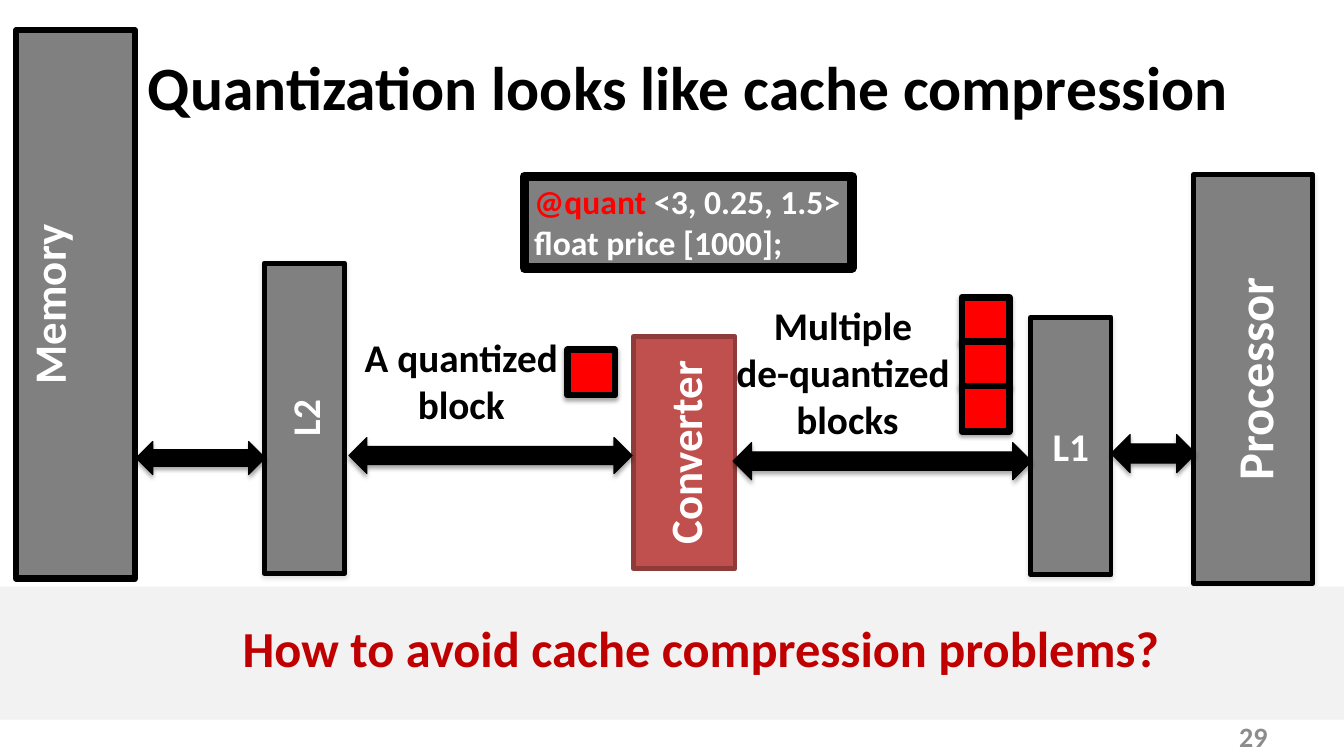
from pptx import Presentation
from pptx.dml.color import RGBColor
from pptx.enum.shapes import MSO_SHAPE as Preset
from pptx.enum.text import MSO_ANCHOR as Anchor, PP_ALIGN as Align
from pptx.oxml import parse_xml
from pptx.oxml.ns import nsdecls, qn
from pptx.util import Inches, Pt

BLACK = RGBColor(0x00, 0x00, 0x00)
WHITE = RGBColor(0xFF, 0xFF, 0xFF)
GRAY = RGBColor(0x80, 0x80, 0x80)
PALE_GRAY = RGBColor(0xF2, 0xF2, 0xF2)
NUMBER_GRAY = RGBColor(0x8C, 0x8C, 0x8C)
SHADOW_GRAY = RGBColor(0xA6, 0xA6, 0xA6)
RED = RGBColor(0xFF, 0x00, 0x00)
DARK_RED = RGBColor(0xC0, 0x00, 0x00)
BRICK = RGBColor(0xC0, 0x50, 0x4D)
BRICK_EDGE = RGBColor(0x8E, 0x3B, 0x39)


def style_font(font, size, color):
    font.name = "Calibri"
    font.size = Pt(size)
    font.bold = True
    font.color.rgb = color


def write(frame, lines, size, color, align=Align.CENTER, anchor=Anchor.MIDDLE):
    frame.word_wrap = True
    frame.vertical_anchor = anchor
    for index, line in enumerate(lines):
        paragraph = frame.paragraphs[0] if index == 0 else frame.add_paragraph()
        paragraph.text = line
        paragraph.alignment = align
        style_font(paragraph.font, size, color)


def add_shadow(shape, color):
    effects = shape._element.spPr.find(qn("a:effectLst"))
    effects.append(parse_xml(
        f'<a:outerShdw {nsdecls("a")} blurRad="{Pt(3.1)}" dist="{Pt(1.8)}" '
        f'dir="5400000" rotWithShape="0"><a:srgbClr val="{color}">'
        '<a:alpha val="35000"/></a:srgbClr></a:outerShdw>'))


def add_block(slide, box, fill, edge=None, width=0, shadow=None,
              preset=Preset.RECTANGLE):
    block = slide.shapes.add_shape(preset, *map(Inches, box))
    block.fill.solid()
    block.fill.fore_color.rgb = fill
    if edge is None:
        block.line.fill.background()
    else:
        block.line.color.rgb = edge
        block.line.width = Pt(width)
    block.shadow.inherit = False
    if shadow is not None:
        add_shadow(block, shadow)
    return block


def add_unit(slide, name, box, size, fill=GRAY, edge=BLACK, shadow=SHADOW_GRAY,
             upward=True, space=0.2):
    frame = add_block(slide, box, fill, edge, 3.5, shadow).text_frame
    write(frame, [name], size, WHITE)
    frame.paragraphs[0].space_before = Pt(size * space)
    if upward:
        frame._txBody.bodyPr.set("vert", "vert270")


def add_arrow(slide, box):
    add_block(slide, box, BLACK, BLACK, 0.75, BLACK, Preset.LEFT_RIGHT_ARROW)


def add_data_block(slide, left, top):
    add_block(slide, (left, top, 0.47, 0.45), RED, BLACK, 4.75, BLACK)


def add_label(slide, box, lines, size=28, color=BLACK, align=Align.CENTER,
              anchor=Anchor.TOP):
    label = slide.shapes.add_textbox(*map(Inches, box))
    write(label.text_frame, lines, size, color, align, anchor)


def add_title(slide, text):
    title = slide.shapes.title
    title.left, title.top = Inches(0.83), Inches(0.23)
    title.width, title.height = Inches(12), Inches(1.25)
    write(title.text_frame, [text], 44, BLACK)


def add_memory(slide):
    memory = add_block(slide, (-1.97, 2.43, 5.44, 1.18), GRAY, BLACK, 4.5)
    memory.rotation = 270
    write(memory.text_frame, ["Memory"], 32, WHITE, anchor=Anchor.TOP)


def add_declaration(slide):
    declaration = add_block(slide, (5.2, 1.75, 3.25, 0.91), GRAY, BLACK, 6.75)
    frame = declaration.text_frame
    write(frame, ["", "float price [1000];"], 24, WHITE, Align.LEFT, Anchor.TOP)
    annotation = frame.paragraphs[0]
    for text, color in (("@quant ", RED), ("<3, 0.25, 1.5>", WHITE)):
        run = annotation.add_run()
        run.text = text
        run.font.color.rgb = color


def add_question(slide, text):
    frame = add_block(slide, (0, 5.82, 13.33, 1.32), PALE_GRAY).text_frame
    write(frame, [text], 36, DARK_RED)
    frame.margin_left, frame.margin_right = Inches(0.58), 0
    frame.paragraphs[0].line_spacing = Pt(35)


def main():
    deck = Presentation()
    deck.slide_width, deck.slide_height = Inches(13.33), Inches(7.5)
    slide = deck.slides.add_slide(deck.slide_layouts[5])

    add_title(slide, "Quantization looks like cache compression")
    add_unit(slide, "L1", (10.22, 3.15, 0.8, 2.55), 28, upward=False)
    add_unit(slide, "Processor", (11.84, 1.73, 1.18, 4.06), 36)
    add_unit(slide, "Converter", (6.28, 3.34, 1.01, 2.3), 32,
             BRICK, BRICK_EDGE, shadow=None, space=0)
    add_label(slide, (3.26, 3.26, 2.63, 1.04), ["A quantized block"])
    add_label(slide, (6.99, 2.94, 2.83, 1.51),
              ["Multiple ", "de-quantized ", "blocks"])

    add_data_block(slide, 5.63, 3.47)
    for row in range(3):
        add_data_block(slide, 9.54, 2.95 + 0.44 * row)

    for box in ((3.46, 4.34, 2.81, 0.36), (7.27, 4.39, 2.96, 0.37),
                (11.02, 4.31, 0.84, 0.38)):
        add_arrow(slide, box)
    add_declaration(slide)
    add_memory(slide)
    add_question(slide, "How to avoid cache compression problems?")
    add_label(slide, (9.56, 7.1, 3.11, 0.4), ["29"], 20, NUMBER_GRAY,
              Align.RIGHT, Anchor.MIDDLE)
    add_unit(slide, "L2", (2.62, 2.61, 0.8, 3.08), 28)
    add_arrow(slide, (1.35, 4.38, 1.28, 0.33))

    deck.save("out.pptx")


if __name__ == "__main__":
    main()
